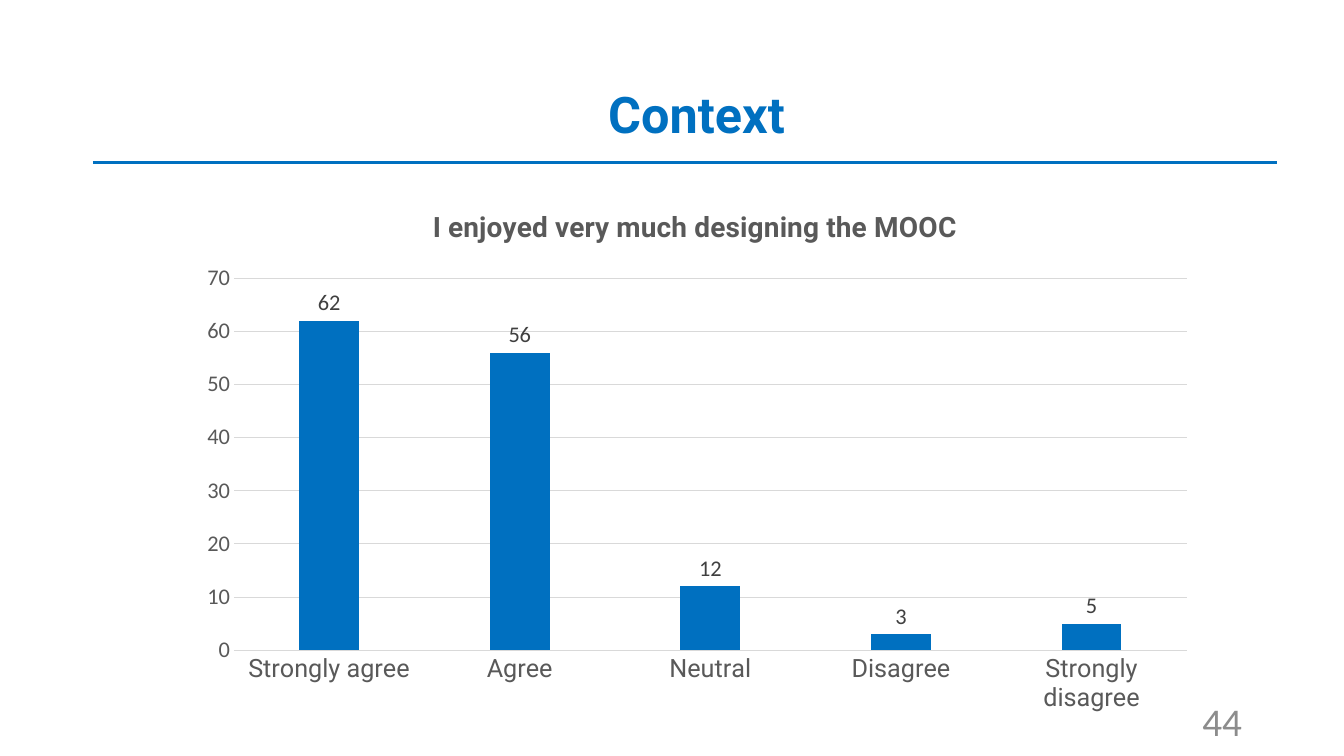
"""Build the Context slide with a column chart of survey answers."""
from lxml.etree import SubElement
from pptx import Presentation
from pptx.chart.data import CategoryChartData
from pptx.dml.color import RGBColor
from pptx.enum.chart import XL_CHART_TYPE as ChartType
from pptx.enum.chart import XL_LABEL_POSITION as LabelPosition
from pptx.enum.chart import XL_TICK_MARK as TickMark
from pptx.enum.shapes import MSO_CONNECTOR as Connector
from pptx.enum.text import MSO_ANCHOR as Anchor
from pptx.enum.text import PP_ALIGN as Align
from pptx.oxml import parse_xml
from pptx.oxml.ns import nsdecls, qn
from pptx.util import Cm, Pt

HEADING = "Context"
PAGE_NUMBER = "44"
QUESTION = "I enjoyed very much designing the MOOC"
ANSWERS = {
    "Strongly agree": 62,
    "Agree": 56,
    "Neutral": 12,
    "Disagree": 3,
    "Strongly disagree": 5,
}
COLORS = {
    "blue": "0070C0",
    "grid": "D9D9D9",
    "axis": "595959",
    "label": "404040",
    "number": "8C8C8C",
}
HEADING_BOX = (1.78, 1.12, 31.55, 3.68)
NUMBER_BOX = (23.93, 17.65, 7.62, 1.02)
CHART_BOX = (4.6, 4.7, 25.83, 13.59)
RULE = (2.34, 4.09, 32.18, 4.09)
PLOT_AREA = {"x": 0.05, "y": 0.17, "w": 0.93, "h": 0.69}


def rgb(color):
    return RGBColor.from_string(COLORS[color])


def style_font(font, size, name, color, bold=False):
    font.size, font.name, font.bold = Pt(size), name, bold
    font.color.rgb = rgb(color)


def style_line(line, color, width):
    line.color.rgb = rgb(color)
    line.width = Pt(width)


def add_text(slide, text, box, align, *font):
    frame = slide.shapes.add_textbox(*map(Cm, box)).text_frame
    frame.word_wrap = True
    frame.vertical_anchor = Anchor.MIDDLE
    paragraph = frame.paragraphs[0]
    paragraph.alignment = align
    run = paragraph.add_run()
    run.text = text
    style_font(run.font, *font)
    return paragraph


def add_rule(slide):
    rule = slide.shapes.add_connector(Connector.STRAIGHT, *map(Cm, RULE))
    style_line(rule.line, "blue", 2)
    SubElement(rule.element.spPr, qn("a:effectLst"))


def place_plot(chart):
    plot_area = chart.element.find(".//" + qn("c:plotArea"))
    for old_layout in plot_area.findall(qn("c:layout")):
        plot_area.remove(old_layout)
    modes = '<c:layoutTarget val="inner"/><c:xMode val="edge"/><c:yMode val="edge"/>'
    sizes = "".join(f'<c:{key} val="{value}"/>' for key, value in PLOT_AREA.items())
    plot_area.insert(0, parse_xml(
        f'<c:layout {nsdecls("c")}><c:manualLayout>{modes}{sizes}'
        "</c:manualLayout></c:layout>"))


def add_answers_chart(slide):
    data = CategoryChartData()
    data.categories = list(ANSWERS)
    data.add_series("Series 1", list(ANSWERS.values()))
    chart = slide.shapes.add_chart(
        ChartType.COLUMN_CLUSTERED, *map(Cm, CHART_BOX), data).chart
    chart.has_legend = False
    chart.font.name, chart.font.size = "Calibri", Pt(10)

    question = chart.chart_title.text_frame.paragraphs[0].add_run()
    question.text = QUESTION
    style_font(question.font, 20, "Roboto", "axis", True)

    categories, values = chart.category_axis, chart.value_axis
    style_font(categories.tick_labels.font, 18, "Roboto", "axis")
    style_font(values.tick_labels.font, 16, "Calibri", "axis")
    for axis in (categories, values):
        axis.major_tick_mark = axis.minor_tick_mark = TickMark.NONE
    style_line(categories.format.line, "grid", 0.75)
    values.format.line.fill.background()
    style_line(values.major_gridlines.format.line, "grid", 0.75)
    values.minimum_scale, values.maximum_scale, values.major_unit = 0, 70, 10

    columns = chart.plots[0]
    columns.gap_width, columns.overlap = 219, -27
    columns.vary_by_categories = False
    answers = columns.series[0]
    answers.format.fill.solid()
    answers.format.fill.fore_color.rgb = rgb("blue")
    labels = answers.data_labels
    labels.show_value = True
    labels.position = LabelPosition.OUTSIDE_END
    style_font(labels.font, 16, "Calibri", "label")
    place_plot(chart)


def main():
    deck = Presentation()
    deck.slide_width, deck.slide_height = Cm(33.87), Cm(19.05)
    slide = deck.slides.add_slide(deck.slide_layouts[6])
    heading = add_text(slide, HEADING, HEADING_BOX, Align.CENTER,
                       36, "Roboto", "blue", True)
    heading.line_spacing = 0.9
    add_rule(slide)
    add_text(slide, PAGE_NUMBER, NUMBER_BOX, Align.RIGHT, 28, "Calibri", "number")
    add_answers_chart(slide)
    deck.save("out.pptx")


if __name__ == "__main__":
    main()
